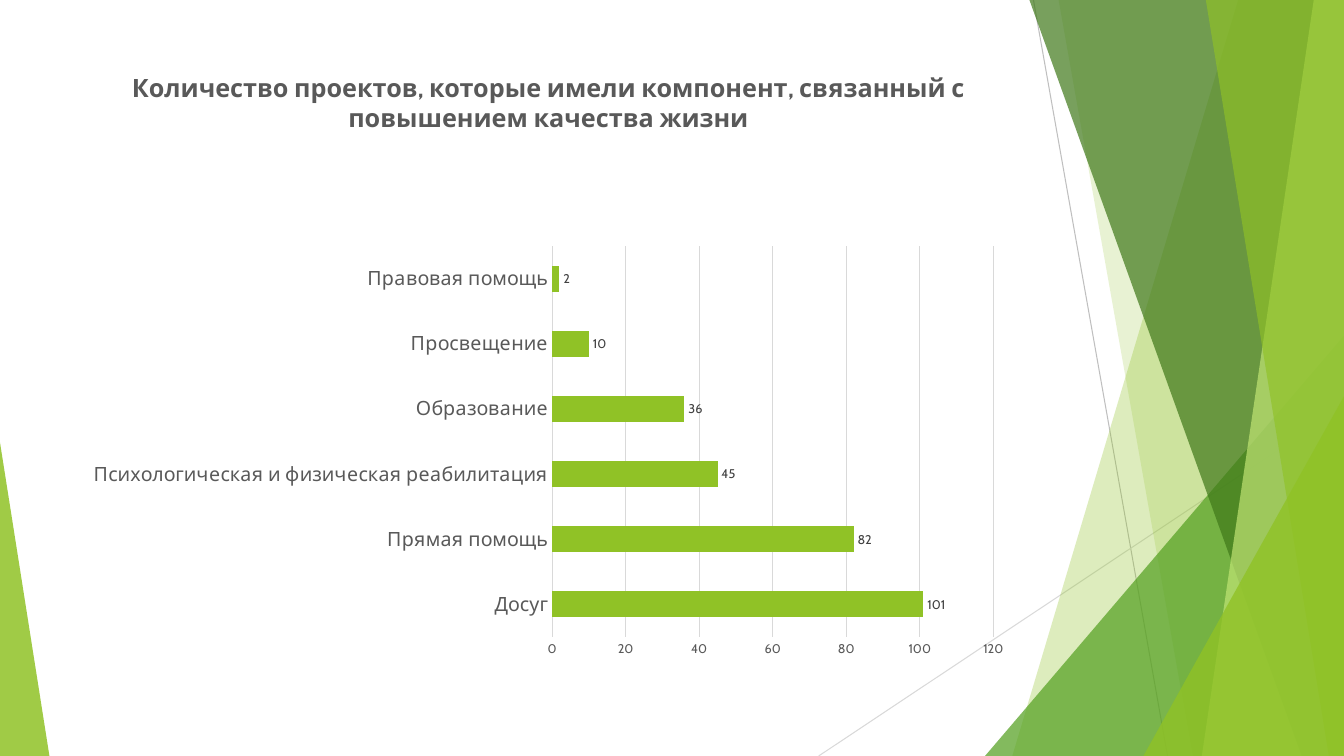
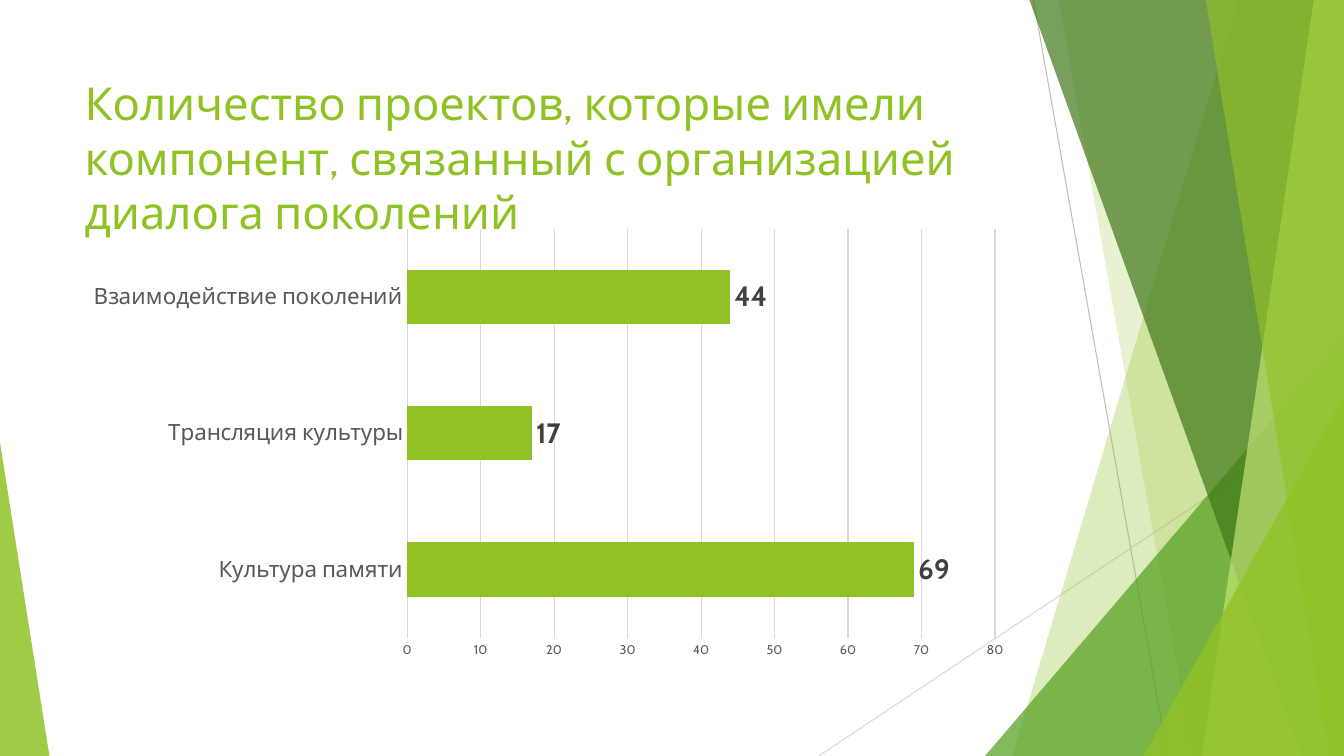
from lxml import etree
from pptx import Presentation
from pptx.chart.data import CategoryChartData
from pptx.dml.color import RGBColor
from pptx.enum.chart import XL_CHART_TYPE, XL_LABEL_POSITION, XL_TICK_MARK
from pptx.enum.shapes import MSO_CONNECTOR, MSO_SHAPE
from pptx.enum.text import PP_ALIGN
from pptx.oxml.ns import qn
from pptx.util import Inches, Pt

TRIANGLE = MSO_SHAPE.ISOSCELES_TRIANGLE
STRAIGHT = MSO_CONNECTOR.STRAIGHT
BAR_CLUSTERED = XL_CHART_TYPE.BAR_CLUSTERED
OUTSIDE_END = XL_LABEL_POSITION.OUTSIDE_END
NO_TICK = XL_TICK_MARK.NONE
LEFT, CENTER = PP_ALIGN.LEFT, PP_ALIGN.CENTER

LIME = RGBColor(0x90, 0xC2, 0x26)
PALE_LIME = RGBColor(0xC0, 0xE4, 0x74)
GREEN = RGBColor(0x54, 0xA0, 0x21)
DARK_GREEN = RGBColor(0x3F, 0x78, 0x19)
TEXT_GREY = RGBColor(0x59, 0x59, 0x59)
LABEL_GREY = RGBColor(0x40, 0x40, 0x40)
LINE_GREY = RGBColor(0xBF, 0xBF, 0xBF)
GRID_GREY = RGBColor(0xD9, 0xD9, 0xD9)
FONT = "Cabin"

SLIDE_W, SLIDE_H = 13.33, 7.5
CONTENT_LEFT, CONTENT_W = 0.74, 9.4

# Thin lines: start x, start y, end x, end y, colour
RAYS = [
    (10.25, 0, 11.58, SLIDE_H, LINE_GREY),
    (SLIDE_W, 4.03, 8.12, SLIDE_H, GRID_GREY),
]
# Bands reach the right edge: top left x, bottom left x, colour, opacity in percent.
# Triangles stand on the bottom edge: left, width, height, apex, colour, opacity.
FACETS = [
    (12.28, 10.04, LIME, 30),
    (10.5, 11.83, LIME, 20),
    (9.77, 3.56, 4.17, 1, GREEN, 72),
    (10.21, 12.91, DARK_GREEN, 70),
    (13.03, 11.92, PALE_LIME, 70),
    (11.96, 13.18, LIME, 65),
    (11.34, 1.99, 3.57, 1, LIME, 80),
    (0, 0.49, 3.11, 0, LIME, 85),
]

PAGES = [
    {
        "title": "Количество проектов, которые имели компонент, "
                 "связанный с повышением качества жизни",
        "title_top": 0.67, "title_height": 0.88, "align": CENTER,
        "title_font": {"size": Pt(18), "bold": True}, "title_color": TEXT_GREY,
        "chart_top": 2.36, "chart_height": 4.24,
        "values": {
            "Досуг": 101,
            "Прямая помощь": 82,
            "Психологическая и физическая реабилитация": 45,
            "Образование": 36,
            "Просвещение": 10,
            "Правовая помощь": 2,
        },
        "axis_max": 120, "axis_step": 20,
        "category_size": 14, "label_font": {"size": Pt(9), "bold": False},
    },
    {
        "title": "Количество проектов, которые имели компонент, "
                 "связанный с организацией диалога поколений",
        "title_top": 0.7, "title_height": 1.79, "align": LEFT,
        "title_font": {"size": Pt(32.4), "bold": False}, "title_color": LIME,
        "chart_top": 2.18, "chart_height": 4.43,
        "values": {
            "Культура памяти": 69,
            "Трансляция культуры": 17,
            "Взаимодействие поколений": 44,
        },
        "axis_max": 80, "axis_step": 10,
        "category_size": 16, "label_font": {"size": Pt(20), "bold": True},
    },
]


def style_font(font, color, **values):
    font.name = FONT
    font.color.rgb = color
    for name, value in values.items():
        setattr(font, name, value)


def draw_backdrop(page):
    """Draw the lines and translucent facets shared by all slides."""
    for x1, y1, x2, y2, color in RAYS:
        ray = page.shapes.add_connector(
            STRAIGHT, Inches(x1), Inches(y1), Inches(x2), Inches(y2))
        ray.line.color.rgb = color
        ray.line.width = Pt(0.75)
        etree.SubElement(ray._element.spPr, qn("a:effectLst"))

    for *outline, color, opacity in FACETS:
        if len(outline) == 2:
            top_x, bottom_x = outline
            builder = page.shapes.build_freeform(Inches(top_x), 0)
            corners = [(SLIDE_W, 0), (SLIDE_W, SLIDE_H), (bottom_x, SLIDE_H)]
            builder.add_line_segments([(Inches(x), Inches(y)) for x, y in corners])
            facet = builder.convert_to_shape()
        else:
            left, width, height, apex = outline
            facet = page.shapes.add_shape(
                TRIANGLE, Inches(left), Inches(SLIDE_H - height),
                Inches(width), Inches(height))
            facet.adjustments[0] = apex
        facet.shadow.inherit = False
        facet.line.fill.background()
        facet.fill.solid()
        facet.fill.fore_color.rgb = color
        color_element = facet._element.spPr.find(qn("a:solidFill"))[0]
        etree.SubElement(color_element, qn("a:alpha"), val=str(opacity * 1000))


deck = Presentation()
deck.slide_width, deck.slide_height = Inches(SLIDE_W), Inches(SLIDE_H)
blank = deck.slide_layouts[6]

for content in PAGES:
    page = deck.slides.add_slide(blank)
    draw_backdrop(page)

    title_box = page.shapes.add_textbox(
        Inches(CONTENT_LEFT), Inches(content["title_top"]),
        Inches(CONTENT_W), Inches(content["title_height"]))
    title_box.text_frame.word_wrap = True
    para = title_box.text_frame.paragraphs[0]
    para.alignment = content["align"]
    span = para.add_run()
    span.text = content["title"]
    style_font(span.font, content["title_color"], **content["title_font"])

    data = CategoryChartData()
    data.categories = list(content["values"])
    data.add_series("Series 1", list(content["values"].values()))
    chart = page.shapes.add_chart(
        BAR_CLUSTERED, Inches(CONTENT_LEFT), Inches(content["chart_top"]),
        Inches(CONTENT_W), Inches(content["chart_height"]), data).chart
    chart.has_title = False
    chart.has_legend = False
    style_font(chart.font, TEXT_GREY, size=Pt(10))

    axis_sizes = [(chart.category_axis, content["category_size"]), (chart.value_axis, 9)]
    for axis, size in axis_sizes:
        axis.major_tick_mark = axis.minor_tick_mark = NO_TICK
        axis.format.line.fill.background()
        style_font(axis.tick_labels.font, TEXT_GREY, size=Pt(size), bold=False)
    chart.category_axis.has_major_gridlines = False
    chart.value_axis.minimum_scale = 0
    chart.value_axis.maximum_scale = content["axis_max"]
    chart.value_axis.major_unit = content["axis_step"]
    grid_line = chart.value_axis.major_gridlines.format.line
    grid_line.color.rgb = GRID_GREY
    grid_line.width = Pt(0.75)

    plot = chart.plots[0]
    plot.gap_width = 150
    plot.vary_by_categories = False
    bars = plot.series[0].format.fill
    bars.solid()
    bars.fore_color.rgb = LIME
    plot.has_data_labels = True
    plot.data_labels.show_value = True
    plot.data_labels.position = OUTSIDE_END
    style_font(plot.data_labels.font, LABEL_GREY, **content["label_font"])

deck.save("out.pptx")
